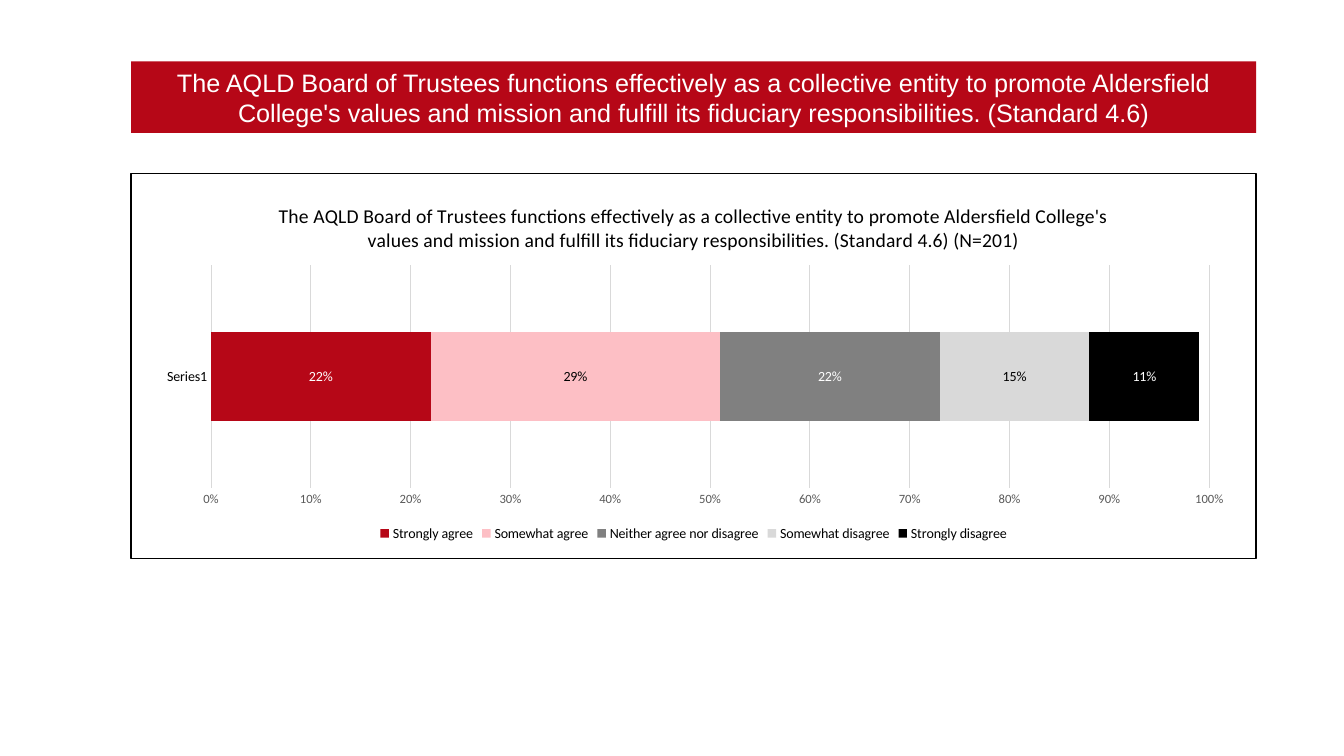
from dataclasses import dataclass

from lxml.etree import SubElement
from pptx import Presentation
from pptx.chart.chart import Chart
from pptx.chart.data import CategoryChartData
from pptx.dml.color import RGBColor
from pptx.dml.line import LineFormat
from pptx.enum.chart import XL_CHART_TYPE, XL_LABEL_POSITION, XL_LEGEND_POSITION, XL_TICK_MARK
from pptx.enum.shapes import MSO_SHAPE
from pptx.enum.text import MSO_ANCHOR, MSO_AUTO_SIZE, PP_ALIGN
from pptx.oxml.ns import qn
from pptx.slide import Slide
from pptx.text.text import Font
from pptx.util import Inches, Pt

COLORS = {
    "red": "B60717",
    "pink": "FDBFC5",
    "gray": "808080",
    "light": "D9D9D9",
    "axis": "595959",
    "black": "000000",
    "white": "FFFFFF",
}
STATEMENT = (
    "The AQLD Board of Trustees functions effectively as a collective entity to promote "
    "Aldersfield College's values and mission and fulfill its fiduciary responsibilities. "
    "(Standard 4.6)"
)
LEFT, WIDTH = 1.3, 11.16


@dataclass
class Answer:
    name: str
    share: float
    fill: str
    label: str


ANSWERS = [
    Answer("Strongly agree", 0.22, "red", "white"),
    Answer("Somewhat agree", 0.29, "pink", "black"),
    Answer("Neither agree nor disagree", 0.22, "gray", "white"),
    Answer("Somewhat disagree", 0.15, "light", "black"),
    Answer("Strongly disagree", 0.11, "black", "white"),
]


def rgb(name: str) -> RGBColor:
    return RGBColor.from_string(COLORS[name])


def style_font(font: Font, size: float, color: str, name: str = "Calibri") -> None:
    formats = {"size": Pt(size), "name": name, "bold": False}
    for key, value in formats.items():
        setattr(font, key, value)
    font.color.rgb = rgb(color)


def style_line(line: LineFormat, color: str, width: float) -> None:
    line.color.rgb = rgb(color)
    line.width = Pt(width)


def add_title(s: Slide) -> None:
    sp = s.shapes.title
    box = {"left": LEFT, "top": 0.61, "width": WIDTH, "height": 0.71}
    for key, value in box.items():
        setattr(sp, key, Inches(value))
    sp.fill.solid()
    sp.fill.fore_color.rgb = rgb("red")
    tf = sp.text_frame
    formats = {
        "word_wrap": True,
        "vertical_anchor": MSO_ANCHOR.MIDDLE,
        "auto_size": MSO_AUTO_SIZE.NONE,
    }
    for key, value in formats.items():
        setattr(tf, key, value)
    p = tf.paragraphs[0]
    p.alignment = PP_ALIGN.CENTER
    r = p.add_run()
    r.text = STATEMENT
    style_font(r.font, 18, "white", "Arial")


def add_frame(s: Slide) -> None:
    sp = s.shapes.add_shape(
        MSO_SHAPE.RECTANGLE, Inches(LEFT), Inches(1.72), Inches(WIDTH), Inches(3.82)
    )
    sp.shadow.inherit = False
    sp.fill.background()
    style_line(sp.line, "black", 1)


def place_plot(chart: Chart) -> None:
    area = chart.plots[0]._element.getparent()
    for old in area.findall(qn("c:layout")):
        area.remove(old)
    layout = SubElement(area, qn("c:layout"))
    area.insert(0, layout)
    manual = SubElement(layout, qn("c:manualLayout"))
    settings = {
        "layoutTarget": "inner", "xMode": "edge", "yMode": "edge",
        "x": "0.06", "y": "0.22", "w": "0.91", "h": "0.62",
    }
    for key, value in settings.items():
        SubElement(manual, qn(f"c:{key}")).set("val", value)


def style_axes(chart: Chart) -> None:
    cat, val = chart.category_axis, chart.value_axis
    for axis, size, color in ((cat, 10, "black"), (val, 9, "axis")):
        axis.major_tick_mark = axis.minor_tick_mark = XL_TICK_MARK.NONE
        style_font(axis.tick_labels.font, size, color)
    style_line(cat.format.line, "light", 0.75)
    val.format.line.fill.background()
    scale = {"minimum_scale": 0, "maximum_scale": 1, "major_unit": 0.1}
    for key, value in scale.items():
        setattr(val, key, value)
    val.tick_labels.number_format = "0%"
    val.tick_labels.number_format_is_linked = False
    style_line(val.major_gridlines.format.line, "light", 0.75)


def style_series(chart: Chart) -> None:
    plot = chart.plots[0]
    formats = {"gap_width": 150, "overlap": 100, "vary_by_categories": False}
    for key, value in formats.items():
        setattr(plot, key, value)
    label_formats = {
        "show_value": True,
        "number_format": "0%",
        "number_format_is_linked": False,
        "position": XL_LABEL_POSITION.CENTER,
    }
    for series, answer in zip(plot.series, ANSWERS):
        series.format.fill.solid()
        series.format.fill.fore_color.rgb = rgb(answer.fill)
        labels = series.data_labels
        for key, value in label_formats.items():
            setattr(labels, key, value)
        style_font(labels.font, 10, answer.label)


def add_answers_chart(s: Slide) -> None:
    data = CategoryChartData(number_format="0%")
    data.categories = ["Series1"]
    for answer in ANSWERS:
        data.add_series(answer.name, [answer.share])
    chart = s.shapes.add_chart(
        XL_CHART_TYPE.BAR_STACKED,
        Inches(1.44), Inches(1.85), Inches(10.88), Inches(3.56), data,
    ).chart
    style_font(chart.font, 10, "black")
    chart.has_title = True
    r = chart.chart_title.text_frame.paragraphs[0].add_run()
    r.text = f"{STATEMENT} (N=201)"
    style_font(r.font, 14, "black")
    chart.has_legend = True
    chart.legend.position = XL_LEGEND_POSITION.BOTTOM
    chart.legend.include_in_layout = False
    style_font(chart.legend.font, 10, "black")
    style_axes(chart)
    style_series(chart)
    place_plot(chart)


def main() -> None:
    prs = Presentation()
    prs.slide_width, prs.slide_height = Inches(13.33), Inches(7.5)
    s = prs.slides.add_slide(prs.slide_layouts[5])
    add_title(s)
    add_frame(s)
    add_answers_chart(s)
    prs.save("out.pptx")


if __name__ == "__main__":
    main()
